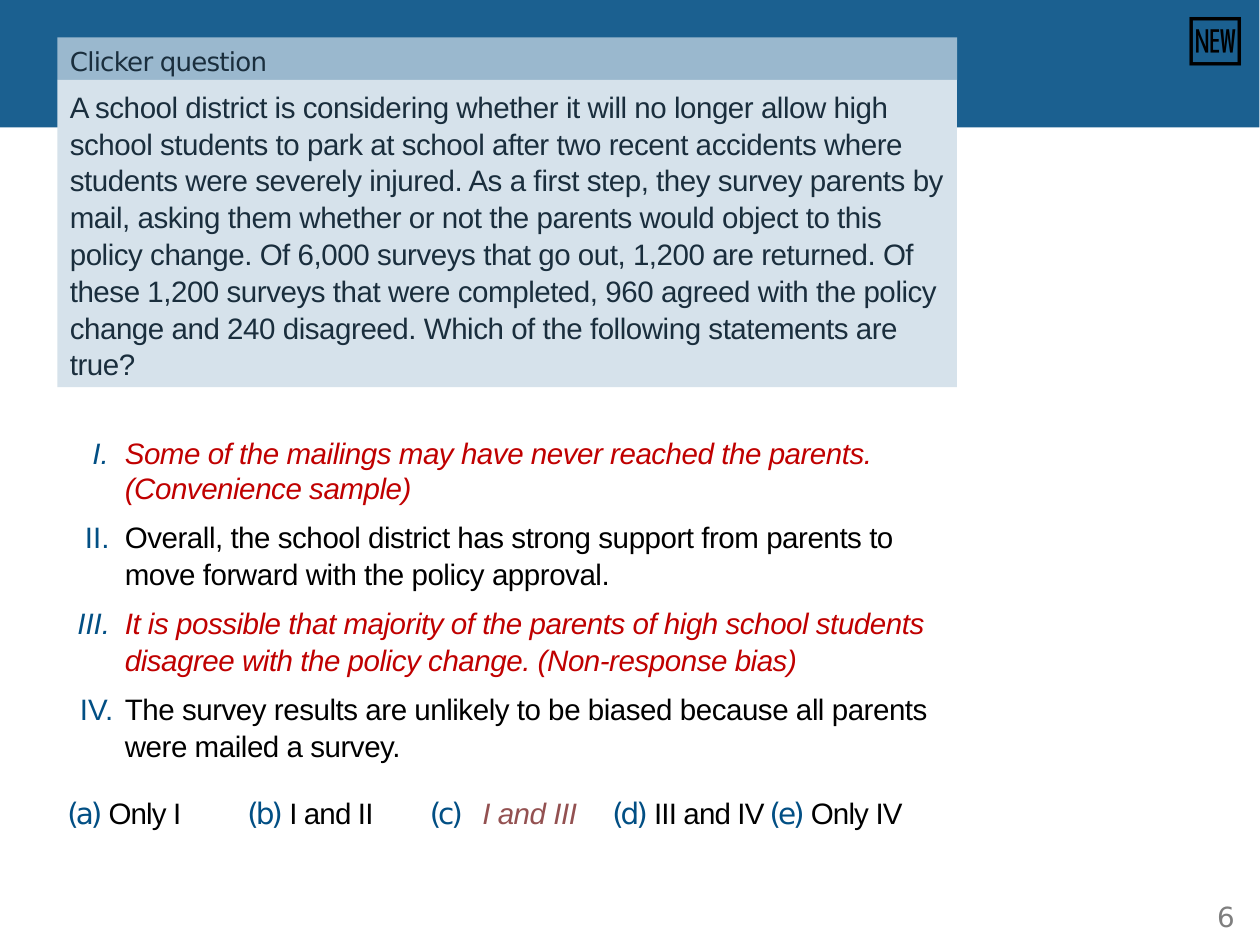
from dataclasses import dataclass

from lxml.etree import SubElement
from pptx import Presentation
from pptx.dml.color import RGBColor
from pptx.enum.shapes import MSO_SHAPE as Shape
from pptx.enum.text import MSO_ANCHOR as Anchor, PP_ALIGN as Align
from pptx.oxml.ns import qn
from pptx.util import Inches, Pt


@dataclass(frozen=True)
class Theme:
    band: str = "1B6090"
    title_bg: str = "9AB8CE"
    question_bg: str = "D6E2EB"
    ink: str = "1A2E3D"
    label: str = "024F84"
    black: str = "000000"
    correct: str = "C00000"
    answer: str = "935151"
    grey: str = "7F7F7F"
    head_font: str = "DejaVu Sans"
    body_font: str = "Arial"
    icon_font: str = "Calibri"
    title_size: float = 7.5
    body_size: float = 8.5
    number_size: float = 8
    icon_size: float = 18


class SlideBuilder:
    def __init__(self, prs, theme):
        self.t = theme
        self.s = prs.slides.add_slide(prs.slide_layouts[5])

    def fill(self, sp, color):
        sp.fill.solid()
        sp.fill.fore_color.rgb = RGBColor.from_string(color)

    def rect(self, x, y, w, h, color):
        sp = self.s.shapes.add_shape(
            Shape.RECTANGLE, Inches(x), Inches(y), Inches(w), Inches(h))
        sp.shadow.inherit = False
        self.fill(sp, color)
        sp.line.fill.background()
        return sp

    def frame(self, sp, left=0, top=0.01, wrap=True):
        tf = sp.text_frame
        tf.word_wrap = wrap
        tf.vertical_anchor = Anchor.TOP
        tf.margin_left, tf.margin_top = Inches(left), Inches(top)
        tf.margin_right = tf.margin_bottom = 0
        return tf

    def text_box(self, x, y, w, h, top=0.01, wrap=True):
        sp = self.s.shapes.add_textbox(Inches(x), Inches(y), Inches(w), Inches(h))
        return self.frame(sp, top=top, wrap=wrap)

    def paragraph(self, p, before=0, line=None):
        p.alignment = Align.LEFT
        p.space_before = Pt(before)
        if line:
            p.line_spacing = line
        return p

    def run(self, p, text, color, size=None, font=None, spacing=-0.15, italic=False):
        r = p.add_run()
        r.text = text
        r.font.name = font or self.t.body_font
        r.font.size = Pt(size or self.t.body_size)
        r.font.italic = italic
        r.font.color.rgb = RGBColor.from_string(color)
        r.font._element.set("spc", str(round(spacing * 100)))

    def title(self, text, x, y, w, h):
        sp = self.s.shapes.title
        sp.left, sp.top, sp.width, sp.height = map(Inches, (x, y, w, h))
        self.fill(sp, self.t.title_bg)
        p = self.paragraph(self.frame(sp, 0.05, 0.03).paragraphs[0], 1.6)
        self.run(p, text, self.t.ink, self.t.title_size, self.t.head_font, -0.25)

    def roman(self, p, hang):
        pPr = p._p.get_or_add_pPr()
        pPr.set("marL", str(Inches(0.2)))
        pPr.set("indent", str(-Inches(hang)))
        color = SubElement(pPr, qn("a:buClr"))
        SubElement(color, qn("a:srgbClr"), val=self.t.label)
        SubElement(pPr, qn("a:buFont"), typeface=self.t.body_font)
        SubElement(pPr, qn("a:buAutoNum"), type="romanUcPeriod")

    def tab_stop(self, p, pos):
        tabs = SubElement(p._p.get_or_add_pPr(), qn("a:tabLst"))
        SubElement(tabs, qn("a:tab"), pos=str(Inches(pos)), algn="l")

    def option(self, x, label, text, color, spacing=-0.25, italic=False):
        p = self.paragraph(self.text_box(x, 3.17, 0.68, 0.17).paragraphs[0], 1)
        if label.endswith("\t"):
            self.tab_stop(p, 0.21)
        self.run(p, label, self.t.label, font=self.t.head_font, spacing=-0.9)
        self.run(p, text, color, spacing=spacing, italic=italic)


QUESTION = (
    "A school district is considering whether it will no longer allow high "
    "school students to park at school after two recent accidents where "
    "students were severely injured. As a ﬁrst step, they survey parents by "
    "mail, asking them whether or not the parents would object to this "
    "policy change. Of 6,000 surveys that go out, 1,200 are returned. Of "
    "these 1,200 surveys that were completed, 960 agreed with the policy "
    "change and 240 disagreed. Which of the following statements are true?")

# text, hanging indent, correct
STATEMENTS = [
    ("Some of the mailings may have never reached the parents. "
     "(Convenience sample)", 0.13, True),
    ("Overall, the school district has strong support from parents to "
     "move forward with the policy approval.", 0.16, False),
    ("It is possible that majority of the parents of high school students "
     "disagree with the policy change. (Non-response bias)", 0.19, True),
    ("The survey results are unlikely to be biased because all parents "
     "were mailed a survey.", 0.18, False),
]


def main():
    prs = Presentation()
    # Page format of 363 by 272.5 points
    prs.slide_width, prs.slide_height = Pt(363), Pt(272.5)
    t = Theme()
    b = SlideBuilder(prs, t)

    # Header band, behind the title
    band = b.rect(0, 0, 5.04, 0.51, t.band)
    b.s.shapes._spTree.insert(2, band._element)

    # Title and question
    b.title("Clicker question", 0.23, 0.15, 3.6, 0.17)
    tf = b.frame(b.rect(0.23, 0.32, 3.6, 1.23, t.question_bg), 0.05, 0.03)
    b.run(b.paragraph(tf.paragraphs[0], 1.7, 1.04), QUESTION, t.ink)

    # Numbered statements
    tf = b.text_box(0.3, 1.67, 3.46, 1.42, top=0.07)
    for i, (text, hang, correct) in enumerate(STATEMENTS):
        p = tf.add_paragraph() if i else tf.paragraphs[0]
        b.paragraph(p, 3.5 if i else 4.9, 1.04 if i else None)
        b.roman(p, hang)
        b.run(p, text, t.correct if correct else t.black, italic=correct)

    # Answer options
    b.option(0.27, "(a) ", "Only I", t.black)
    b.option(0.99, "(b) ", "I and II", t.black)
    b.option(1.72, "(c)\t", "I and III", t.answer, spacing=-0.15, italic=True)
    b.option(2.45, "(d) ", "III and IV", t.black)
    b.option(3.08, "(e) ", "Only IV", t.black)

    # Slide number and badge
    p = b.paragraph(b.text_box(4.87, 3.59, 0.09, 0.16).paragraphs[0], 0.6)
    b.run(p, "6", t.grey, t.number_size, t.head_font, -0.7)
    p = b.text_box(4.74, -0.01, 0.25, 0.3, top=0, wrap=False).paragraphs[0]
    b.run(p, "🆕", t.black, t.icon_size, t.icon_font, 0)

    prs.save("out.pptx")


if __name__ == "__main__":
    main()
